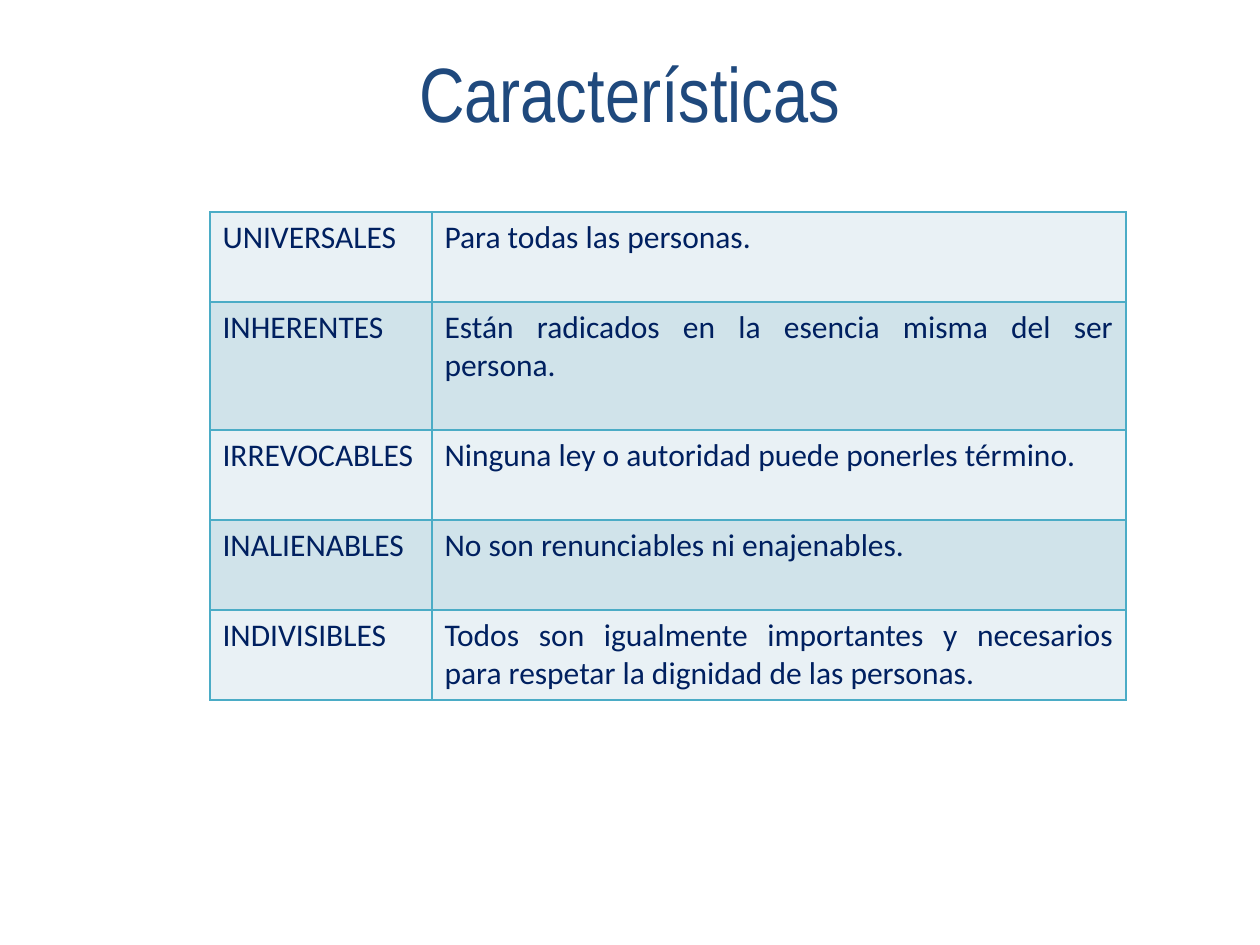
from dataclasses import dataclass

from lxml.etree import SubElement
from pptx import Presentation
from pptx.dml.color import RGBColor
from pptx.enum.text import MSO_ANCHOR, PP_ALIGN
from pptx.oxml.ns import qn
from pptx.slide import Slide
from pptx.table import _Cell
from pptx.text.text import TextFrame
from pptx.util import Emu, Pt

PX_PER_INCH = 126
BORDER_COLOR = "4BACC6"
BAND_FILLS = ("E9F1F5", "D0E3EA")
COLUMN_WIDTHS = (222, 694)
TABLE_LEFT, TABLE_TOP = 210, 212


@dataclass(frozen=True)
class Characteristic:
    name: str
    meaning: str
    height: int = 90


@dataclass(frozen=True)
class TextStyle:
    font: str
    size: int
    color: str
    align: PP_ALIGN


TITLE_STYLE = TextStyle("Arial Narrow", 44, "1F497D", PP_ALIGN.CENTER)
CELL_STYLE = TextStyle("Calibri", 18, "002060", PP_ALIGN.JUSTIFY)

CHARACTERISTICS = (
    Characteristic("UNIVERSALES", "Para todas las personas."),
    Characteristic("INHERENTES", "Están radicados en la esencia misma del ser persona.", 128),
    Characteristic("IRREVOCABLES", "Ninguna ley o autoridad puede ponerles término."),
    Characteristic("INALIENABLES", "No son renunciables ni enajenables."),
    Characteristic(
        "INDIVISIBLES",
        "Todos son igualmente importantes y necesarios para respetar la dignidad de las personas.",
    ),
)


def px(length: int) -> Emu:
    return Emu(round(length * 914400 / PX_PER_INCH))


def rgb(color: str) -> RGBColor:
    return RGBColor.from_string(color)


def write(frame: TextFrame, text: str, style: TextStyle) -> None:
    frame.text = text
    paragraph = frame.paragraphs[0]
    paragraph.alignment = style.align
    font = paragraph.runs[0].font
    font.name = style.font
    font.size = Pt(style.size)
    font.color.rgb = rgb(style.color)


def add_borders(cell: _Cell) -> None:
    """Outline all four sides; the lines must precede the cell fill in the XML."""
    properties = cell._tc.get_or_add_tcPr()
    for side in ("a:lnL", "a:lnR", "a:lnT", "a:lnB"):
        line = SubElement(properties, qn(side), w=str(Pt(1)))
        fill = SubElement(line, qn("a:solidFill"))
        SubElement(fill, qn("a:srgbClr"), val=BORDER_COLOR)


def add_title(slide: Slide, text: str) -> None:
    title = slide.shapes.add_textbox(px(63), px(38), px(1134), px(107))
    frame = title.text_frame
    frame.word_wrap = True
    frame.vertical_anchor = MSO_ANCHOR.MIDDLE
    write(frame, text, TITLE_STYLE)


def add_characteristics_table(slide: Slide, characteristics: tuple[Characteristic, ...]) -> None:
    total_height = sum(item.height for item in characteristics)
    table = slide.shapes.add_table(
        len(characteristics), len(COLUMN_WIDTHS),
        px(TABLE_LEFT), px(TABLE_TOP), px(sum(COLUMN_WIDTHS)), px(total_height),
    ).table
    table.first_row = False
    table.horz_banding = False
    for column, width in zip(table.columns, COLUMN_WIDTHS):
        column.width = px(width)
    for index, (row, item) in enumerate(zip(table.rows, characteristics)):
        row.height = px(item.height)
        for cell, text in zip(row.cells, (item.name, item.meaning)):
            write(cell.text_frame, text, CELL_STYLE)
            add_borders(cell)
            cell.fill.solid()
            cell.fill.fore_color.rgb = rgb(BAND_FILLS[index % 2])


def main() -> None:
    presentation = Presentation()
    presentation.slide_width = px(1260)
    presentation.slide_height = px(945)
    slide = presentation.slides.add_slide(presentation.slide_layouts[6])
    add_title(slide, "Características")
    add_characteristics_table(slide, CHARACTERISTICS)
    presentation.save("out.pptx")


if __name__ == "__main__":
    main()
